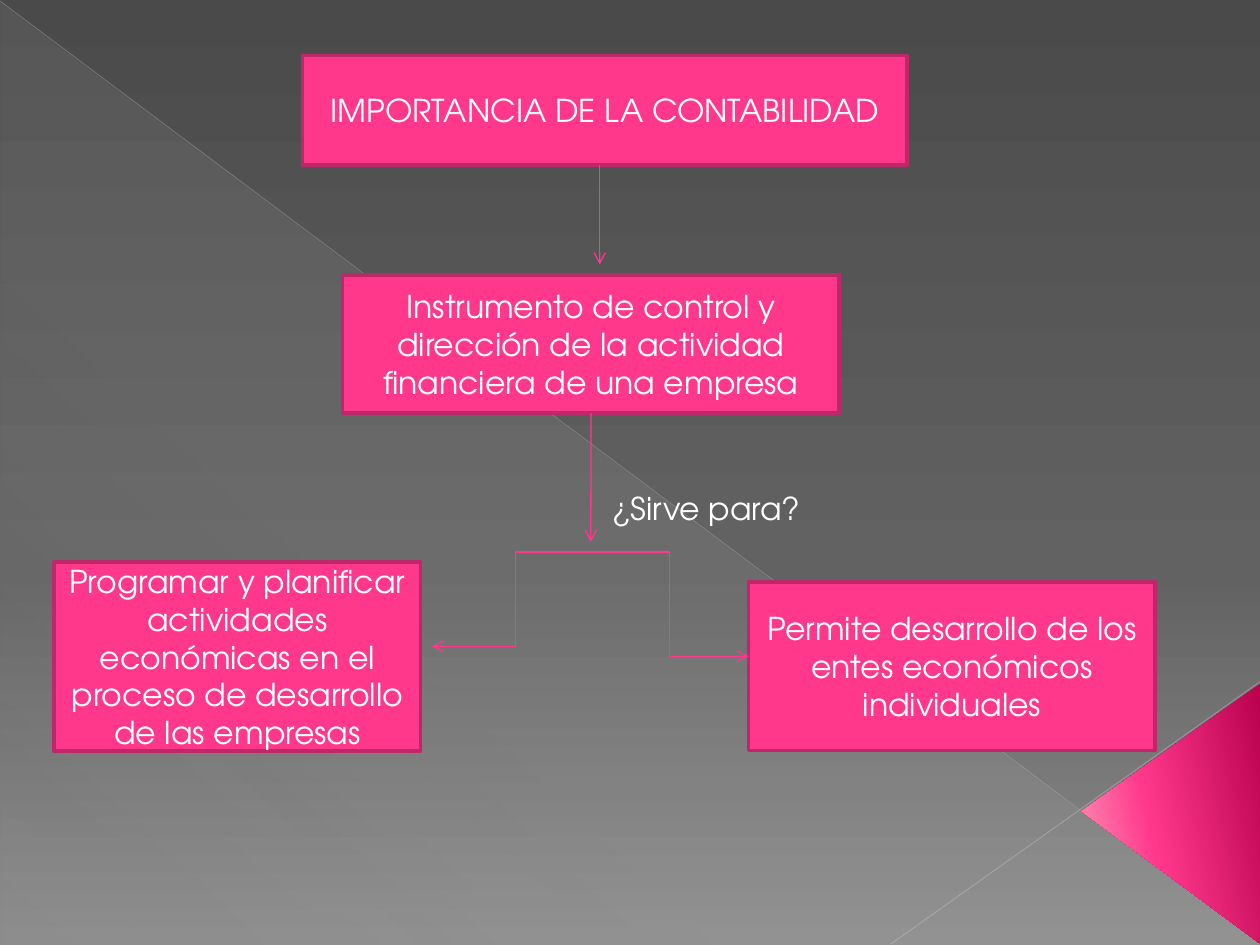
from dataclasses import dataclass
from typing import Any

from lxml import etree
from pptx import Presentation
from pptx.dml.color import RGBColor
from pptx.enum.shapes import MSO_CONNECTOR, MSO_SHAPE
from pptx.enum.text import MSO_ANCHOR, MSO_AUTO_SIZE, PP_ALIGN
from pptx.oxml.ns import qn
from pptx.util import Cm, Pt

RECTANGLE = MSO_SHAPE.RECTANGLE
RIGHT_TRIANGLE = MSO_SHAPE.RIGHT_TRIANGLE
TRIANGLE = MSO_SHAPE.ISOSCELES_TRIANGLE
STRAIGHT = MSO_CONNECTOR.STRAIGHT
ELBOW = MSO_CONNECTOR.ELBOW
MIDDLE = MSO_ANCHOR.MIDDLE
CENTER = PP_ALIGN.CENTER
FIT_SHAPE = MSO_AUTO_SIZE.SHAPE_TO_FIT_TEXT

FONT = "TeX Gyre Adventor"
PINK = "FF388C"
DARK_PINK = "BD2968"
WHITE = "FFFFFF"
BOTTOM_SIDE = 2


@dataclass(frozen=True)
class Frame:
    left: float
    top: float
    width: float
    height: float

    def lengths(self) -> tuple[Cm, Cm, Cm, Cm]:
        return Cm(self.left), Cm(self.top), Cm(self.width), Cm(self.height)


@dataclass(frozen=True)
class Stop:
    position: int
    color: str
    opacity: int = 100


@dataclass(frozen=True)
class Link:
    begin: tuple[float, float]
    end: tuple[float, float]
    kind: Any = STRAIGHT
    color: str = PINK
    width: float = 0.75
    opacity: int = 100
    arrow: bool = True


@dataclass(frozen=True)
class Box:
    frame: Frame
    text: str


TITLE = Box(Frame(6.1, 1.12, 12.19, 2.21), "IMPORTANCIA DE LA CONTABILIDAD")
DEFINITION = Box(
    Frame(6.91, 5.54, 10.01, 2.79),
    "Instrumento de control y dirección de la actividad financiera de una empresa",
)
PLANNING = Box(
    Frame(1.09, 11.33, 7.39, 3.81),
    "Programar y planificar actividades económicas en el proceso de desarrollo de las empresas",
)
DEVELOPMENT = Box(
    Frame(15.09, 11.73, 8.2, 3.4),
    "Permite desarrollo de los entes económicos individuales",
)
QUESTION = Box(Frame(12.09, 9.73, 5.21, 1.02), "¿Sirve para?")

BACKGROUND_STOPS = [Stop(0, "4A4A4A"), Stop(60, "626262"), Stop(100, "8C8C8C")]
VEIL_STOPS = [Stop(0, "D2D2D2", 10), Stop(70, "D2D2D2", 8), Stop(100, "D2D2D2", 1)]
CORNER_STOPS = [Stop(0, "B8014E"), Stop(60, PINK), Stop(100, "FF9CB9")]

DECORATIVE_LINES = [
    Link((0, 0.02), (25.38, 19.03), color="BFBFBF", width=0.39, opacity=35, arrow=False),
    Link((25.4, 13.74), (17.96, 19.03), color="C6C6C6", width=0.47, opacity=45, arrow=False),
]
TITLE_ARROW = Link((12.09, 3.33), (12.09, 5.33))
DEFINITION_ARROW = Link((11.91, 8.33), (11.91, 10.92))
BRANCHES = [
    Link((11.91, 11.13), (15.09, 13.23), ELBOW),
    Link((12.09, 11.13), (8.71, 13.03), ELBOW),
]


def hex_color(value: str) -> RGBColor:
    return RGBColor.from_string(value)


def add_opacity(color_element: Any, opacity: int) -> None:
    if opacity < 100:
        etree.SubElement(color_element, qn("a:alpha"), val=str(opacity * 1000))


def fill_gradient(fill: Any, owner: Any, stops: list[Stop], angle: int) -> None:
    fill.gradient()
    gradient = owner.find(".//" + qn("a:gradFill"))
    for child in list(gradient):
        gradient.remove(child)
    stop_list = etree.SubElement(gradient, qn("a:gsLst"))
    for stop in stops:
        entry = etree.SubElement(stop_list, qn("a:gs"), pos=str(stop.position * 1000))
        color = etree.SubElement(entry, qn("a:srgbClr"), val=stop.color)
        add_opacity(color, stop.opacity)
    etree.SubElement(gradient, qn("a:lin"), ang=str(angle * 60000), scaled="0")


def add_gradient_shape(slide: Any, kind: Any, frame: Frame, stops: list[Stop], angle: int) -> Any:
    shape = slide.shapes.add_shape(kind, *frame.lengths())
    shape.shadow.inherit = False
    shape.line.fill.background()
    fill_gradient(shape.fill, shape._element.spPr, stops, angle)
    return shape


def write_text(shape: Any, text: str) -> Any:
    shape.text_frame.word_wrap = True
    paragraph = shape.text_frame.paragraphs[0]
    run = paragraph.add_run()
    run.text = text
    run.font.name = FONT
    run.font.size = Pt(18)
    run.font.color.rgb = hex_color(WHITE)
    return paragraph


def add_box(slide: Any, box: Box) -> Any:
    shape = slide.shapes.add_shape(RECTANGLE, *box.frame.lengths())
    shape.shadow.inherit = False
    shape.fill.solid()
    shape.fill.fore_color.rgb = hex_color(PINK)
    shape.line.color.rgb = hex_color(DARK_PINK)
    shape.line.width = Pt(2)
    shape.text_frame.vertical_anchor = MIDDLE
    write_text(shape, box.text).alignment = CENTER
    return shape


def add_label(slide: Any, label: Box) -> None:
    shape = slide.shapes.add_textbox(*label.frame.lengths())
    write_text(shape, label.text)
    shape.text_frame.auto_size = FIT_SHAPE


def add_link(slide: Any, link: Link) -> Any:
    points = [Cm(value) for value in (*link.begin, *link.end)]
    connector = slide.shapes.add_connector(link.kind, *points)
    connector.line.color.rgb = hex_color(link.color)
    connector.line.width = Pt(link.width)
    properties = connector._element.spPr
    add_opacity(properties.find(".//" + qn("a:srgbClr")), link.opacity)
    if link.arrow:
        etree.SubElement(properties.find(qn("a:ln")), qn("a:tailEnd"), type="arrow")
    etree.SubElement(properties, qn("a:effectLst"))
    return connector


def main() -> None:
    presentation = Presentation()
    presentation.slide_width = Cm(25.4)
    presentation.slide_height = Cm(19.05)
    slide = presentation.slides.add_slide(presentation.slide_layouts[6])

    fill_gradient(slide.background.fill, slide._element, BACKGROUND_STOPS, 90)
    add_gradient_shape(slide, RIGHT_TRIANGLE, Frame(0.02, 0.04, 25.36, 19), VEIL_STOPS, 133)
    for line in DECORATIVE_LINES:
        add_link(slide, line)
    corner = add_gradient_shape(slide, TRIANGLE, Frame(20.98, 14.6, 5.26, 3.61), CORNER_STOPS, 258)
    corner.adjustments[0] = 0.51
    corner.rotation = 270

    add_box(slide, TITLE)
    add_link(slide, TITLE_ARROW)
    definition = add_box(slide, DEFINITION)
    add_link(slide, DEFINITION_ARROW).begin_connect(definition, BOTTOM_SIDE)
    add_box(slide, PLANNING)
    add_label(slide, QUESTION)
    add_box(slide, DEVELOPMENT)
    for branch in BRANCHES:
        add_link(slide, branch)

    presentation.save("out.pptx")


if __name__ == "__main__":
    main()
